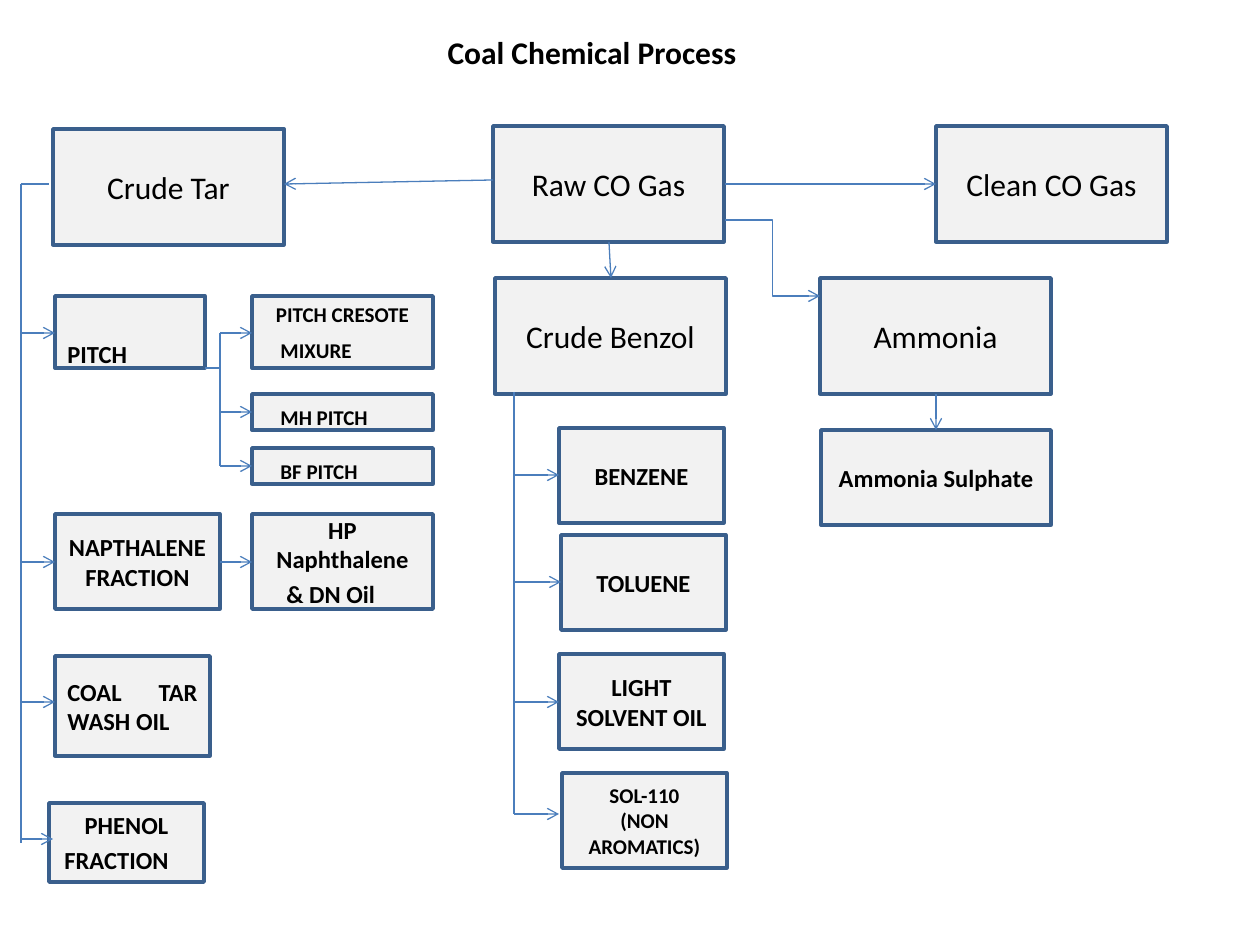
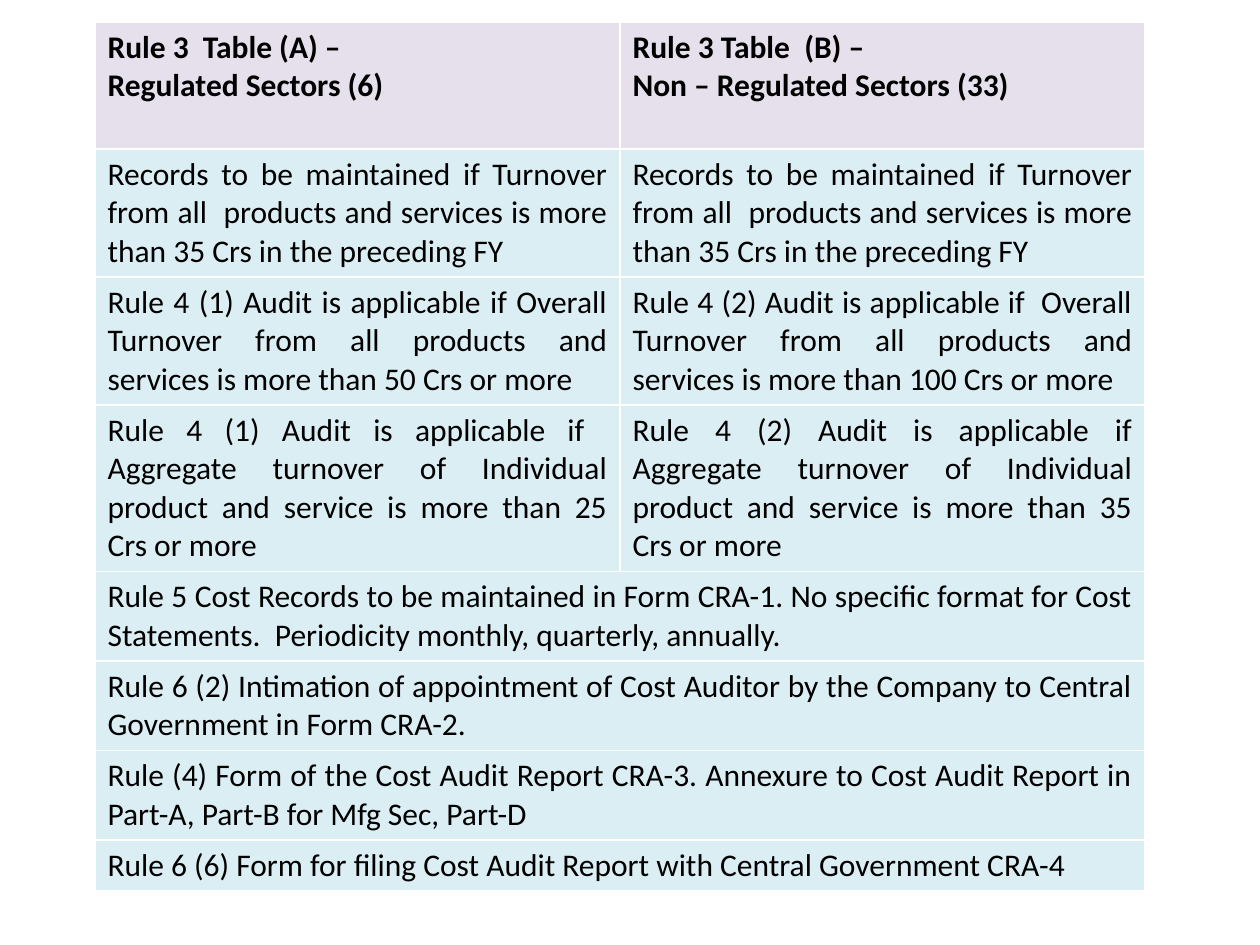
from lxml.etree import SubElement
from pptx import Presentation
from pptx.dml.color import RGBColor
from pptx.enum.shapes import MSO_CONNECTOR, MSO_SHAPE
from pptx.enum.text import MSO_ANCHOR, PP_ALIGN
from pptx.oxml.ns import qn
from pptx.util import Inches, Pt

COLORS = {
    "text": "000000",
    "box": "F2F2F2",
    "border": "3A5F8C",
    "flow": "4B7EBC",
    "header": "E6E0EC",
    "body": "DBEEF4",
}
FONT = "Calibri"
PX_PER_INCH = 126
CENTER, LEFT, JUSTIFY = PP_ALIGN.CENTER, PP_ALIGN.LEFT, PP_ALIGN.JUSTIFY

MAIN_SIZE = (231, 116)
NARROW_SIZE = (165, 95)

SECTORS = [
    ("Rule 3  Table (A) –\nRegulated Sectors (6)",
     "Rule 3 Table  (B) –\nNon – Regulated Sectors (33)"),
    ("Records to be maintained if Turnover from all  products and services is more than 35 Crs in the preceding FY",
     "Records to be maintained if Turnover from all  products and services is more than 35 Crs in the preceding FY"),
    ("Rule 4 (1) Audit is applicable if Overall Turnover from all products and services is more than 50 Crs or more",
     "Rule 4 (2) Audit is applicable if  Overall Turnover from all products and services is more than 100 Crs or more"),
    ("Rule 4 (1) Audit is applicable if  Aggregate turnover of Individual product and service is more than 25 Crs or more",
     "Rule 4 (2) Audit is applicable if Aggregate turnover of Individual product and service is more than 35 Crs or more"),
    ("Rule 5 Cost Records to be maintained in Form CRA-1. No specific format for Cost Statements.  "
     "Periodicity monthly, quarterly, annually.",),
    ("Rule 6 (2) Intimation of appointment of Cost Auditor by the Company to Central Government in Form CRA-2.",),
    ("Rule (4) Form of the Cost Audit Report CRA-3. Annexure to Cost Audit Report in Part-A, Part-B for Mfg Sec, Part-D",),
    ("Rule 6 (6) Form for filing Cost Audit Report with Central Government CRA-4",),
]
LINES_PER_ROW = [3, 3, 3, 4, 2, 2, 2, 1]


def px(length):
    """Turn px into EMU."""
    return round(length * Inches(1) / PX_PER_INCH)


def color(name):
    """Look up a palette colour."""
    return RGBColor.from_string(COLORS[name])


def write(frame, text, size=18, bold=False, align=CENTER, tail_indent=None, gap=0):
    """Write one paragraph per line; tail_indent sets the last one flush left."""
    frame.text = text
    for paragraph in frame.paragraphs:
        paragraph.alignment = align
        for run in paragraph.runs:
            run.font.name = FONT
            run.font.size = Pt(size)
            run.font.bold = bold
            run.font.color.rgb = color("text")
    if tail_indent is not None:
        tail = frame.paragraphs[-1]
        tail.alignment = LEFT
        tail.space_before = Pt(gap)
        tail._p.get_or_add_pPr().set("marL", str(px(tail_indent)))


def add_box(slide, text, left, top, width, height, low=False, **text_format):
    """Add a bordered process box; low puts its text on the bottom edge."""
    box = slide.shapes.add_shape(MSO_SHAPE.RECTANGLE, px(left), px(top), px(width), px(height))
    box.shadow.inherit = False
    box.fill.solid()
    box.fill.fore_color.rgb = color("box")
    box.line.color.rgb = color("border")
    box.line.width = Pt(2)
    frame = box.text_frame
    frame.word_wrap = True
    frame.vertical_anchor = MSO_ANCHOR.BOTTOM if low else MSO_ANCHOR.MIDDLE
    if low:
        frame.margin_bottom = 0
    write(frame, text, **text_format)


def add_flow(slide, start, end, arrow=True, kind=MSO_CONNECTOR.STRAIGHT):
    """Add a flow line from start to end."""
    flow = slide.shapes.add_connector(kind, *map(px, (*start, *end)))
    flow.line.color.rgb = color("flow")
    flow.line.width = Pt(0.75)
    properties = flow._element.spPr
    if arrow:
        SubElement(properties.find(qn("a:ln")), qn("a:tailEnd"), type="arrow")
    SubElement(properties, qn("a:effectLst"))


def add_branches(slide, trunk_x, top, bottom, targets):
    """Add a vertical trunk with an arrow to each target point."""
    add_flow(slide, (trunk_x, top), (trunk_x, bottom), arrow=False)
    for x, y in targets:
        add_flow(slide, (trunk_x, y), (x, y))


def add_title(slide, text, left, top, width, height):
    """Place and format the slide title."""
    title = slide.shapes.title
    title.left, title.top, title.width, title.height = map(px, (left, top, width, height))
    title.text_frame.word_wrap = False
    title.text_frame.vertical_anchor = MSO_ANCHOR.MIDDLE
    write(title.text_frame, text, bold=True)


def build_process(slide):
    """Draw the coal chemical process."""
    add_title(slide, "Coal Chemical Process", 434, 27, 316, 50)

    for stage, left, top in [
        ("Raw CO Gas", 493, 126),
        ("Crude Tar", 53, 129),
        ("Crude Benzol", 495, 278),
        ("Ammonia", 820, 278),
        ("Clean CO Gas", 936, 126),
    ]:
        add_box(slide, stage, left, top, *MAIN_SIZE)

    tar = {"size": 14, "bold": True}
    add_box(slide, "PITCH", 55, 296, 150, 72, low=True, tail_indent=0, **tar)
    add_box(slide, "NAPTHALENE\nFRACTION", 55, 514, *NARROW_SIZE, **tar)
    add_box(slide, "COAL TAR WASH OIL", 55, 656, 155, 100, align=JUSTIFY, **tar)
    add_box(slide, "PHENOL\nFRACTION", 49, 803, 155, 79, tail_indent=3, gap=3, **tar)
    add_box(slide, "HP Naphthalene\n& DN Oil", 252, 514, 181, 95, tail_indent=22, gap=3, **tar)

    pitch = {"size": 12, "bold": True, "tail_indent": 16}
    add_box(slide, "PITCH CRESOTE\nMIXURE", 252, 296, 181, 72, gap=6, **pitch)
    for product, top in [("MH PITCH", 394), ("BF PITCH", 448)]:
        add_box(slide, product, 252, top, 181, 36, low=True, **pitch)

    for product, left, top, size in [
        ("BENZENE", 559, 428, 14),
        ("TOLUENE", 561, 535, 14),
        ("LIGHT SOLVENT OIL", 559, 654, 14),
        ("SOL-110\n(NON AROMATICS)", 562, 773, 12),
    ]:
        add_box(slide, product, left, top, *NARROW_SIZE, size=size, bold=True)
    add_box(slide, "Ammonia Sulphate", 821, 430, 230, 95, size=14, bold=True)

    add_branches(slide, 21, 184, 843, [(55, 333), (55, 562), (55, 702), (53, 839)])
    add_branches(slide, 220, 333, 466, [(252, 333), (252, 412), (252, 466)])
    add_branches(slide, 514, 392, 814, [(559, 475), (561, 582), (559, 702), (559, 814)])
    add_flow(slide, (21, 184), (49, 184), arrow=False)
    add_flow(slide, (205, 368), (220, 368), arrow=False)
    for start, end in [
        ((220, 562), (252, 562)),
        ((609, 242), (611, 278)),
        ((725, 184), (936, 184)),
        ((936, 394), (936, 430)),
        ((493, 180), (284, 184)),
    ]:
        add_flow(slide, start, end)
    add_flow(slide, (725, 220), (820, 296), kind=MSO_CONNECTOR.ELBOW)


def build_rules(slide):
    """Lay out the cost audit rules for both kinds of sector."""
    heights = [13 + 38 * lines for lines in LINES_PER_ROW]
    rules = slide.shapes.add_table(
        len(SECTORS), 2, px(95), px(22), px(1050), px(sum(heights))).table
    rules.horz_banding = False
    for row, (texts, height) in enumerate(zip(SECTORS, heights)):
        rules.rows[row].height = px(height)
        is_header = row == 0
        if len(texts) == 1:
            rules.cell(row, 0).merge(rules.cell(row, 1))
        for column, text in enumerate(texts):
            cell = rules.cell(row, column)
            cell.fill.solid()
            cell.fill.fore_color.rgb = color("header" if is_header else "body")
            write(cell.text_frame, text, bold=is_header, align=LEFT if is_header else JUSTIFY)


def main():
    """Build and save both slides."""
    deck = Presentation()
    deck.slide_width, deck.slide_height = Inches(10), Inches(7.5)
    title_only, blank = deck.slide_layouts[5], deck.slide_layouts[6]
    build_process(deck.slides.add_slide(title_only))
    build_rules(deck.slides.add_slide(blank))
    deck.save("out.pptx")


if __name__ == "__main__":
    main()
